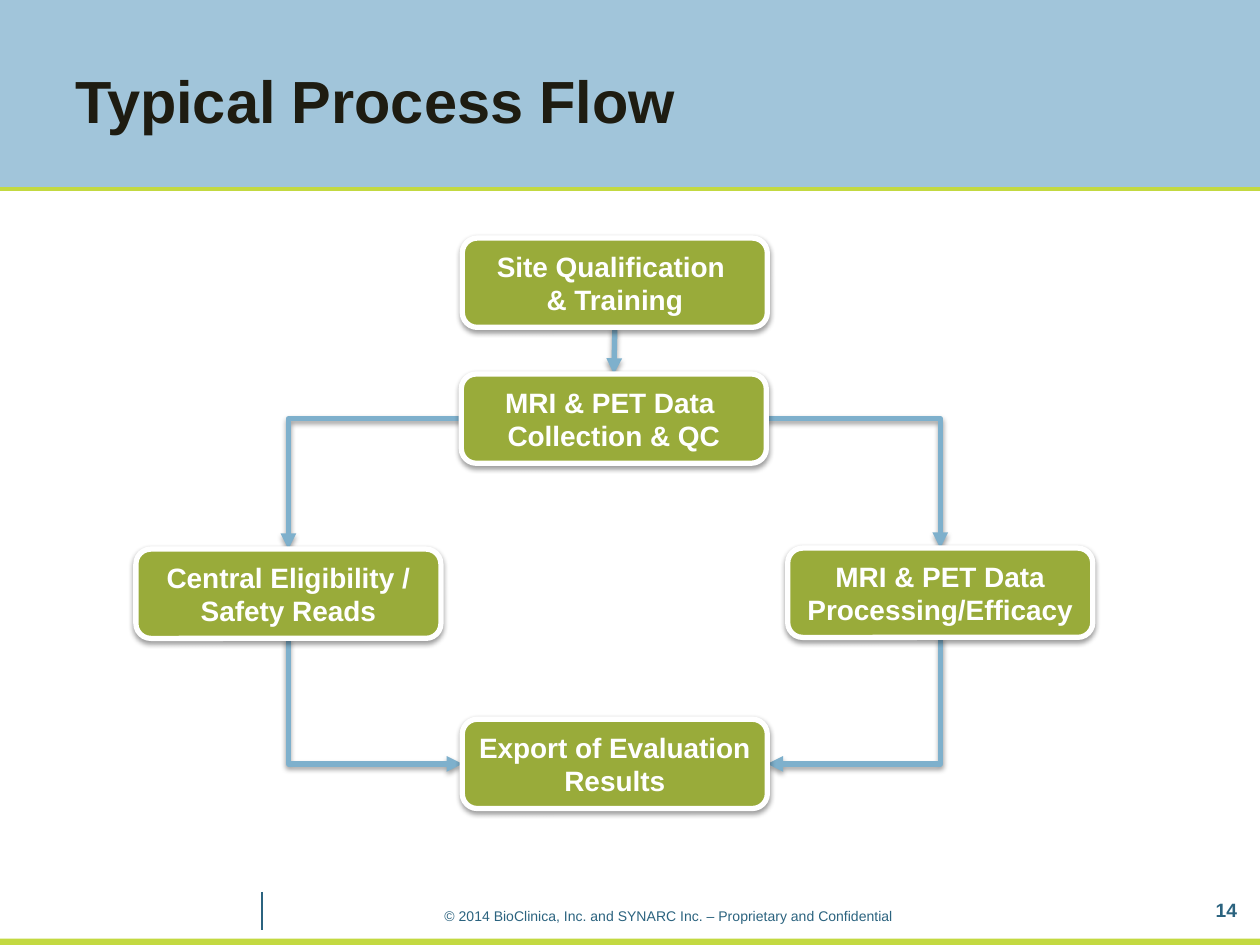
"""Build the Typical Process Flow slide."""
import pptx
import pptx.dml.color
import pptx.enum.shapes
import pptx.enum.text
import pptx.oxml
import pptx.oxml.ns
import pptx.util
from lxml import etree

Cm, Pt = pptx.util.Cm, pptx.util.Pt
SHAPE = pptx.enum.shapes.MSO_SHAPE
CONN = pptx.enum.shapes.MSO_CONNECTOR
ALIGN = pptx.enum.text.PP_ALIGN
MIDDLE = pptx.enum.text.MSO_ANCHOR.MIDDLE
qn = pptx.oxml.ns.qn
NS = "http://schemas.openxmlformats.org/drawingml/2006/main"
COLORS = {"blue": "7EB0CC", "lime": "C3D941", "olive": "99AB3A",
          "teal": "2B637F", "title": "1E1C11", "white": "FFFFFF"}
RGB = {k: pptx.dml.color.RGBColor.from_string(v) for k, v in COLORS.items()}
SHADOW = (f'<a:effectLst xmlns:a="{NS}"><a:outerShdw blurRad="39370" dist="20320" '
          'dir="5400000" rotWithShape="0"><a:srgbClr val="000000">'
          '<a:alpha val="38000"/></a:srgbClr></a:outerShdw></a:effectLst>')


def add_line(x1, y1, x2, y2, color, width, flow=False):
    c = s.shapes.add_connector(CONN.STRAIGHT, Cm(x1), Cm(y1), Cm(x2), Cm(y2))
    c.line.color.rgb = RGB[color]
    c.line.width = Pt(width)
    sppr = c._element.spPr
    if flow:
        etree.SubElement(sppr.find(qn("a:ln")), qn("a:tailEnd"), type="triangle")
        sppr.append(pptx.oxml.parse_xml(SHADOW))
    else:
        etree.SubElement(sppr, qn("a:effectLst"))
    return c


def set_text(sp, lines, size, color, bold=False, align=ALIGN.LEFT):
    tf = sp.text_frame
    tf.word_wrap = True
    tf.vertical_anchor = MIDDLE
    tf.text = lines
    for p in tf.paragraphs:
        p.alignment = align
        p.font.name = "Arial"
        p.font.size = Pt(size)
        p.font.bold = bold
        p.font.color.rgb = RGB[color]


prs = pptx.Presentation()
prs.slide_width, prs.slide_height = Cm(25.4), Cm(19.05)
s = prs.slides.add_slide(prs.slide_layouts[6])

for top, height, color in [(0, 3.81, "blue"), (18.92, 0.13, "lime")]:
    sp = s.shapes.add_shape(SHAPE.RECTANGLE, 0, Cm(top), Cm(25.4), Cm(height))
    sp.shadow.inherit = False
    sp.fill.solid()
    sp.fill.fore_color.rgb = RGB[color]
    sp.line.fill.background()
    if color == "blue":
        clr = sp._element.spPr.find(".//" + qn("a:srgbClr"))
        etree.SubElement(clr, qn("a:alpha"), val="72000")
add_line(0, 3.81, 25.4, 3.81, "lime", 2.25)
add_line(5.28, 17.98, 5.28, 18.75, "teal", 0.75)

for x, y, w, h, text, size, color, bold, align in [
        (8.71, 18.16, 11.61, 0.61,
         "© 2014 BioClinica, Inc. and SYNARC Inc. – Proprietary and Confidential",
         8, "teal", False, ALIGN.LEFT),
        (23.72, 17.83, 1.47, 1.02, "14", 11, "teal", True, ALIGN.RIGHT),
        (1.27, 0.2, 22.86, 3.61, "Typical Process Flow", 34, "title", True, ALIGN.LEFT)]:
    sp = s.shapes.add_textbox(Cm(x), Cm(y), Cm(w), Cm(h))
    set_text(sp, text, size, color, bold, align)

W, H = 6.15, 1.8
boxes = {"site": (9.32, 4.8, "Site Qualification \v& Training"),
         "collect": (9.3, 7.54, "MRI & PET Data \nCollection & QC"),
         "reads": (2.74, 11.07, "Central Eligibility / Safety Reads"),
         "process": (15.88, 11.05, "MRI & PET Data\nProcessing/Efficacy"),
         "export": (9.32, 14.5, "Export of Evaluation Results")}

cx, cy = boxes["site"][0] + W / 2, boxes["site"][1] + H
down = add_line(cx, cy, cx, boxes["collect"][1], "blue", 3, True)

for side, edge, turn in [("reads", 0, 270), ("process", W, 90)]:
    x, y = boxes[side][0] + W / 2, boxes[side][1]
    x1, y1 = boxes["collect"][0] + edge, boxes["collect"][1] + H / 2
    x2, y2 = boxes["export"][0] + edge, boxes["export"][1] + H / 2
    mx, my = (x + x2) / 2, (y + H + y2) / 2
    dx, dy = (x2 - x) / 2, (y2 - y - H) / 2
    sign = 1 if turn == 90 else -1
    for ends, rot in [((x1, y1, x, y), 0),
                      ((mx - sign * dy, my - abs(dx),
                        mx + sign * dy, my + abs(dx)), turn)]:
        c = add_line(*ends, "blue", 3, True)
        sppr = c._element.spPr
        sppr.find(qn("a:prstGeom")).set("prst", "bentConnector2")
        if rot:
            sppr.find(qn("a:xfrm")).set("rot", str(rot * 60000))

nodes = {}
for name, (x, y, text) in boxes.items():
    sp = s.shapes.add_shape(SHAPE.ROUNDED_RECTANGLE, Cm(x), Cm(y), Cm(W), Cm(H))
    sp.fill.solid()
    sp.fill.fore_color.rgb = RGB["olive"]
    sp.line.color.rgb = RGB["white"]
    sp.line.width = Pt(3)
    sp._element.spPr.append(pptx.oxml.parse_xml(SHADOW))
    set_text(sp, text, 16, "white", True, ALIGN.CENTER)
    nodes[name] = sp
down.begin_connect(nodes["site"], 2)
down.end_connect(nodes["collect"], 0)

prs.save("out.pptx")
